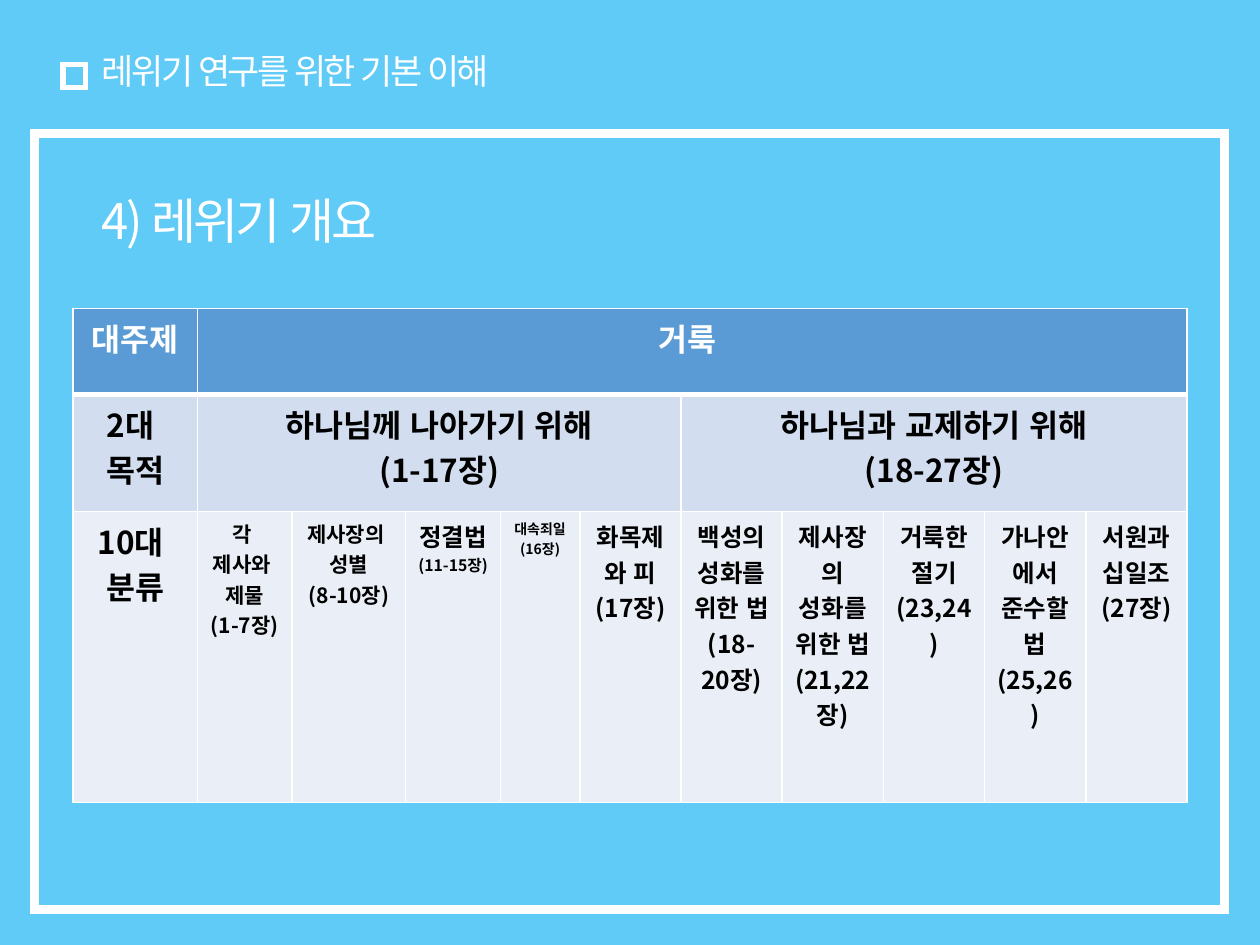
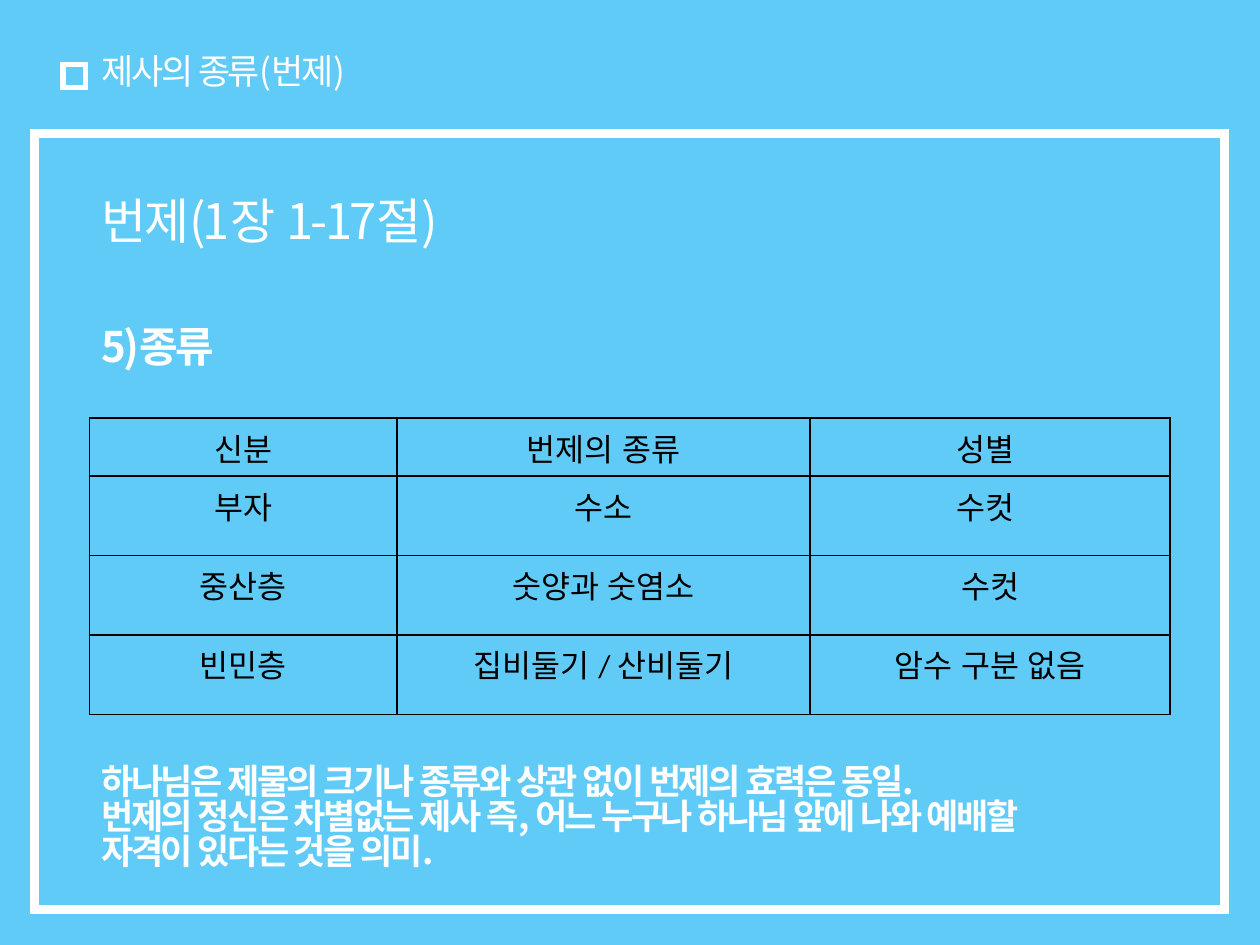
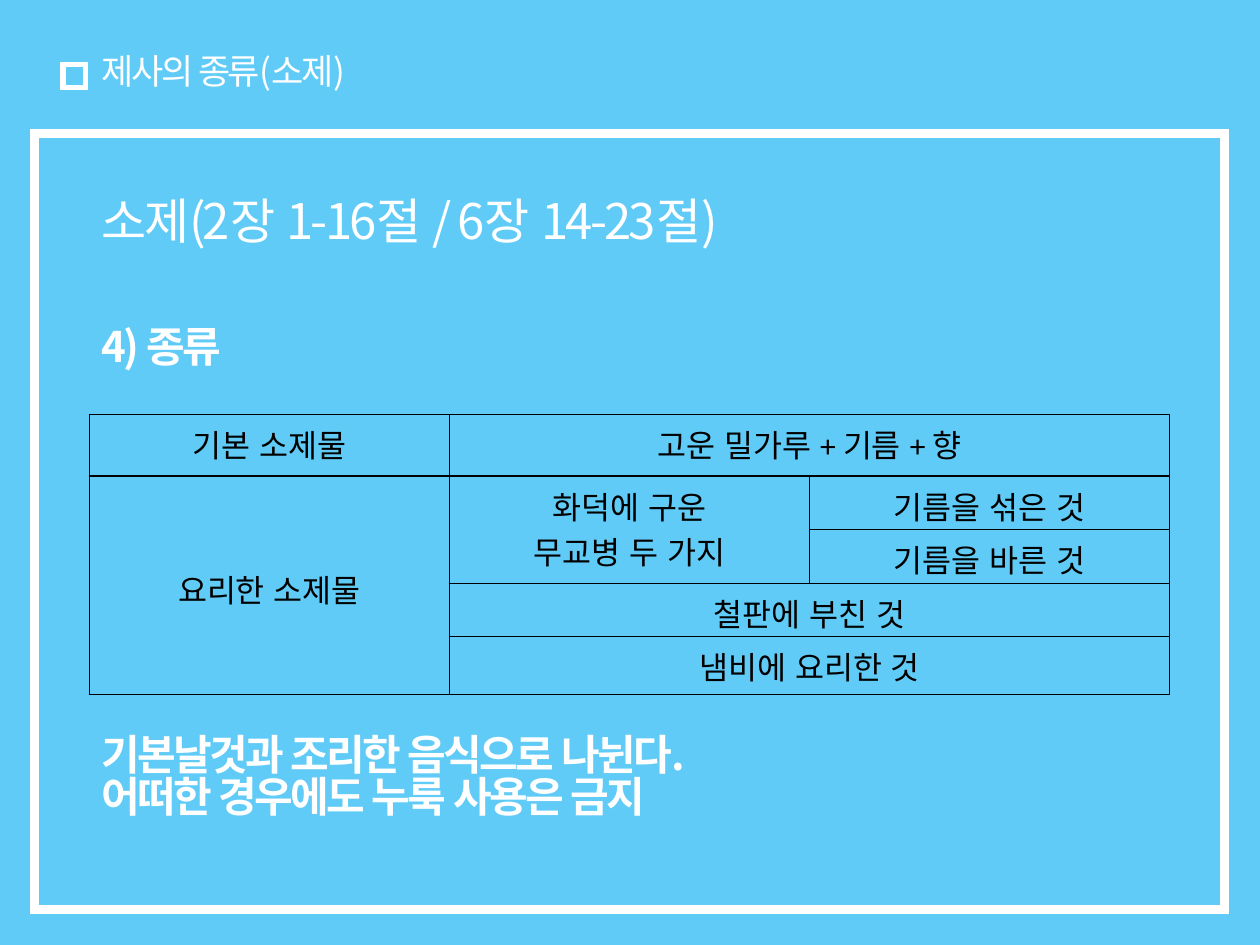
from dataclasses import dataclass
from itertools import product
from lxml.etree import SubElement
from pptx import Presentation
from pptx.dml.color import RGBColor
from pptx.enum.lang import MSO_LANGUAGE_ID
from pptx.enum.shapes import MSO_SHAPE
from pptx.enum.text import MSO_ANCHOR, MSO_AUTO_SIZE, PP_ALIGN
from pptx.oxml.ns import qn
from pptx.util import Cm, Pt


@dataclass(frozen=True)
class Theme:
    sky: str = "60CBF6"
    white: str = "FFFFFF"
    black: str = "000000"
    bands: tuple = ("5B9BD5", "D2DEEF", "EAEFF7")
    sans: str = "Noto Sans CJK KR"
    latin: str = "Calibri"
    title: int = 20
    head: int = 28
    sub: int = 24
    cell: int = 18
    tight: int = -150
    lead: float = 0.83
    left: float = 1.8
    wide: float = 21.79


look = Theme()


def write(frame, text, sizes, color=look.white, font=look.sans, bold=False,
          align=PP_ALIGN.LEFT, space=None, lead=None, hang=0):
    frame.text = text
    frame.word_wrap = True
    for i, para in enumerate(frame.paragraphs):
        para.alignment = align
        if lead:
            para.line_spacing = lead
        if hang:
            props = para._p.get_or_add_pPr()
            props.set("marL", str(Cm(hang)))
            props.set("indent", str(-Cm(hang)))
        for run in para.runs:
            run.font.size = Pt(sizes[min(i, len(sizes) - 1)])
            run.font.bold = bold
            run.font.color.rgb = RGBColor.from_string(color)
            run.font.name = font
            run.font.language_id = MSO_LANGUAGE_ID.KOREAN
            props = run._r.get_or_add_rPr()
            SubElement(props, qn("a:ea")).set("typeface", look.sans)
            if space:
                props.set("spc", str(space))


def outline(slide, place, weight):
    shape = slide.shapes.add_shape(MSO_SHAPE.RECTANGLE, *map(Cm, place))
    shape.shadow.inherit = False
    shape.fill.background()
    shape.line.color.rgb = RGBColor.from_string(look.white)
    shape.line.width = Pt(weight)
    SubElement(shape._element.spPr.find(qn("a:ln")), qn("a:miter")).set("lim", "800000")
    return shape


pages = [
    {
        "title": "레위기 연구를 위한 기본 이해",
        "head": "4) 레위기 개요",
        "notes": [],
        "place": (1.47, 6.22),
        "cols": [2.51, 1.91, 2.29, 1.91, 1.6] + [2.04] * 6,
        "rows": [1.73, 2.36, 5.87],
        "spans": [(0, 1, 0, 10), (1, 1, 1, 5), (1, 6, 1, 10)],
        "sizes": {(2, 1): [12], (2, 2): [12], (2, 3): [14, 9], (2, 4): [8],
                  **{(2, c): [14] for c in range(5, 11)}},
        "banded": True,
        "cells": [
            ["대주제", "거룩 "],
            ["2대 \n목적", "하나님께 나아가기 위해\n(1-17장)", None, None, None, None,
             "하나님과 교제하기 위해\n(18-27장)"],
            ["10대 \n분류", "각 \n제사와 \n제물\n(1-7장)", "제사장의 \n성별\n(8-10장)",
             "정결법\n(11-15장)", "대속죄일\n(16장)", "화목제와 피\n(17장)",
             "백성의 성화를 위한 법\v(18-20장)", "제사장의 성화를 위한 법(21,22장)",
             "거룩한 절기\n(23,24)", "가나안에서 준수할 법\n(25,26)", "서원과 십일조\n(27장)"],
        ],
    },
    {
        "title": "제사의 종류(번제)",
        "head": "번제(1장 1-17절)",
        "notes": [
            ("5)종류", 6.5, 1.27, look.sub),
            ("하나님은 제물의 크기나 종류와 상관 없이 번제의 효력은 동일.\n"
             "번제의 정신은 차별없는 제사 즉, 어느 누구나 하나님 앞에 나와 예배할\n"
             "자격이 있다는 것을 의미.", 15.34, 2.82, look.title),
        ],
        "place": (look.left, 8.43),
        "cols": [6.2, 8.33, 7.26],
        "rows": [1.17, 1.6, 1.6, 1.6],
        "spans": [],
        "sizes": {},
        "banded": False,
        "cells": [
            ["신분", "번제의 종류", "성별 "],
            ["부자", "수소", "수컷 "],
            ["중산층", "숫양과 숫염소", "수컷"],
            ["빈민층", "집비둘기 / 산비둘기", "암수 구분 없음"],
        ],
    },
    {
        "title": "제사의 종류(소제)",
        "head": "소제(2장 1-16절 / 6장 14-23절)",
        "notes": [
            ("4) 종류", 6.5, 3.33, look.sub),
            ("기본날것과 조리한 음식으로 나뉜다.\n어떠한 경우에도 누룩 사용은 금지",
             14.73, 4.37, look.sub),
        ],
        "place": (look.left, 8.36),
        "cols": [7.26] * 3,
        "rows": [1.24, 1.07, 1.09, 1.07, 1.17],
        "spans": [(0, 1, 0, 2), (1, 0, 4, 0), (1, 1, 2, 1), (3, 1, 3, 2), (4, 1, 4, 2)],
        "sizes": {},
        "banded": False,
        "cells": [
            ["기본 소제물", "고운 밀가루 + 기름 + 향"],
            ["요리한 소제물", "화덕에 구운\n무교병 두 가지", "기름을 섞은 것"],
            [None, None, "기름을 바른 것"],
            [None, "철판에 부친 것"],
            [None, "냄비에 요리한 것"],
        ],
    },
]

deck = Presentation()
deck.slide_width, deck.slide_height = Cm(25.4), Cm(19.05)
plain = deck.slide_layouts[5]
back = deck.slide_master.background.fill
back.solid()
back.fore_color.rgb = RGBColor.from_string(look.sky)

for page in pages:
    slide = deck.slides.add_slide(plain)
    outline(slide, (0.69, 2.69, 24, 15.65), 5)

    title = slide.shapes.title
    title.left, title.top = Cm(look.left), Cm(1.07)
    title.width, title.height = Cm(look.wide), Cm(1.88)
    title.text_frame.vertical_anchor = MSO_ANCHOR.TOP
    title.text_frame.auto_size = MSO_AUTO_SIZE.NONE
    write(title.text_frame, page["title"], [look.title], space=look.tight, lead=0.75)

    head = slide.shapes.add_textbox(Cm(look.left), Cm(3.91), Cm(look.wide), Cm(1.45))
    write(head.text_frame, page["head"], [look.head], space=look.tight, lead=look.lead)

    for text, top, high, size in page["notes"]:
        note = slide.shapes.add_textbox(Cm(look.left), Cm(top), Cm(look.wide), Cm(high))
        write(note.text_frame, text, [size], bold=True, space=look.tight,
              lead=look.lead, hang=1.27)

    cols, rows, banded = page["cols"], page["rows"], page["banded"]
    left, top = page["place"]
    table = slide.shapes.add_table(len(rows), len(cols), Cm(left), Cm(top),
                                   Cm(sum(cols)), Cm(sum(rows))).table
    table.first_row = table.horz_banding = False
    for col, wide in zip(table.columns, cols):
        col.width = Cm(wide)
    for row, high in zip(table.rows, rows):
        row.height = Cm(high)

    for r, c in product(range(len(rows)), range(len(cols))):
        cell = table.cell(r, c)
        props = cell._tc.get_or_add_tcPr()
        for side in "LRTB":
            thick = banded and (r, side) in [(0, "B"), (1, "T")]
            line = SubElement(props, qn("a:ln" + side), w=str(Pt(3 if thick else 1)))
            paint = SubElement(line, qn("a:solidFill"))
            SubElement(paint, qn("a:srgbClr"), val=look.white if banded else look.black)
        if banded:
            cell.fill.solid()
            cell.fill.fore_color.rgb = RGBColor.from_string(look.bands[r])
        else:
            cell.fill.background()
            cell.margin_bottom = 0
        text = page["cells"][r][c] if c < len(page["cells"][r]) else None
        if text:
            write(cell.text_frame, text, page["sizes"].get((r, c), [look.cell]),
                  color=look.white if banded and r == 0 else look.black,
                  font=look.sans if banded else look.latin,
                  bold=banded, align=PP_ALIGN.CENTER)

    for r, c, down, across in page["spans"]:
        table.cell(r, c).merge(table.cell(down, across))
        if down - r > 1:
            table.cell(r, c).vertical_anchor = MSO_ANCHOR.MIDDLE

mark = outline(slide, (1.27, 1.3, 0.46, 0.46), 3)
plain.shapes._spTree.append(mark._element)

deck.save("out.pptx")
